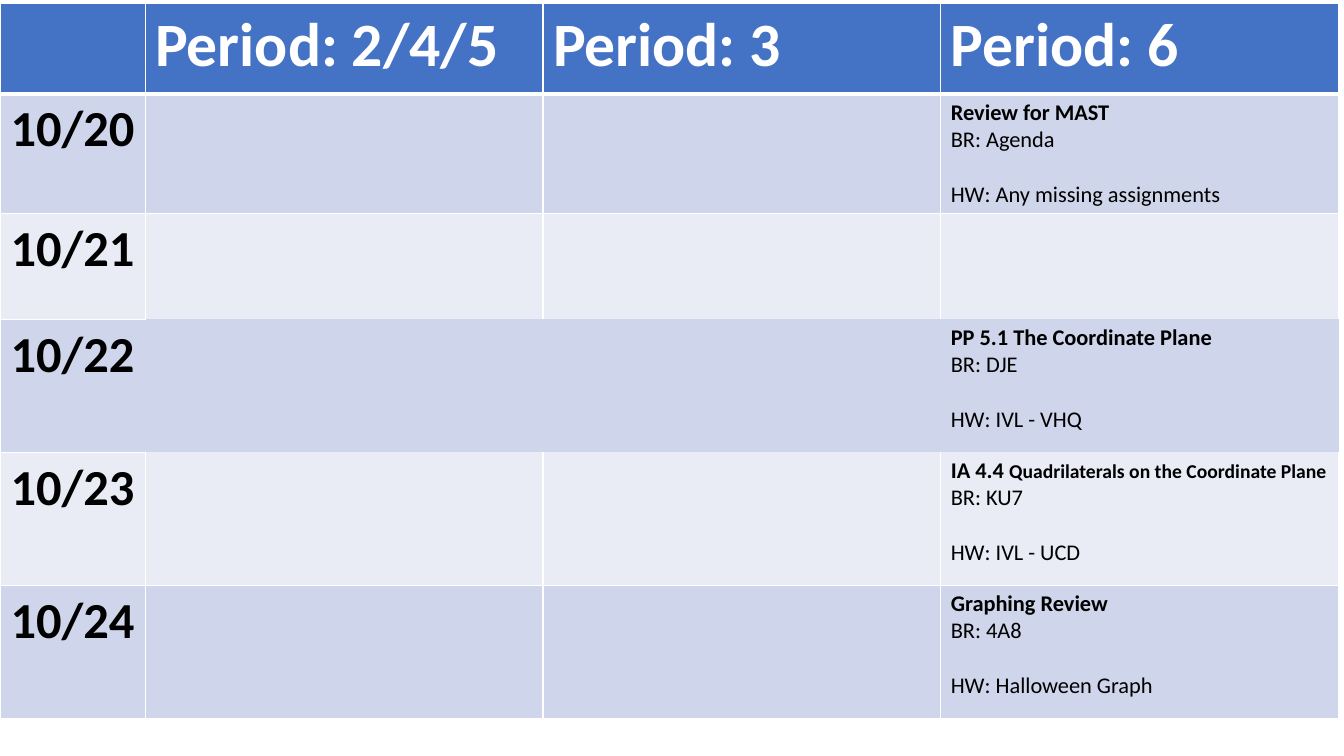
from dataclasses import dataclass

import pptx
import pptx.dml.color
import pptx.enum.text
import pptx.oxml
import pptx.oxml.ns
import pptx.util


@dataclass(frozen=True)
class Theme:
    font: str = "Calibri"
    header_fill: str = "4472C4"
    bands: tuple[str, str] = ("CFD5EA", "E9EBF5")
    white: str = "FFFFFF"
    ink: str = "000000"
    header_size: float = 44
    date_size: float = 36
    lesson_size: float = 16
    topic_size: float = 14
    homework_gap: float = 19.5
    thin: float = 1
    thick: float = 3


@dataclass(frozen=True)
class Span:
    text: str
    size: float
    bold: bool = True
    color: str = Theme.ink


@dataclass(frozen=True)
class Lesson:
    title: str
    opener: str
    homework: str
    topic: str = ""


@dataclass(frozen=True)
class Day:
    date: str
    height: float
    lesson: Lesson | None = None


THEME = Theme()
SLIDE_WIDTH = pptx.util.Inches(13.33)
SLIDE_HEIGHT = pptx.util.Inches(7.5)
TABLE_TOP = 0.004
COLUMN_SHARES = (0.108, 0.296, 0.296, 0.296)
HEADER_SHARE = 0.12
HEADINGS = ("", "Period: 2/4/5", "Period: 3", "Period: 6")
DAYS = (
    Day("10/20", 0.155, Lesson("Review for MAST", "BR: Agenda", "HW: Any missing assignments")),
    Day("10/21", 0.14),
    Day("10/22", 0.176, Lesson("PP 5.1 The Coordinate Plane", "BR: DJE", "HW: IVL - VHQ")),
    Day("10/23", 0.176, Lesson("IA 4.4 ", "BR: KU7", "HW: IVL - UCD",
                               "Quadrilaterals on the Coordinate Plane")),
    Day("10/24", 0.176, Lesson("Graphing Review", "BR: 4A8", "HW: Halloween Graph")),
)
OPEN_ROW = 1 + [day.date for day in DAYS].index("10/22")


def write_paragraph(box, index: int, spans: list[Span], **layout) -> None:
    para = box.paragraphs[0] if index == 0 else box.add_paragraph()
    for name, value in layout.items():
        setattr(para, name, value)
    for span in spans:
        run = para.add_run()
        run.text = span.text
        formats = {"name": THEME.font, "size": pptx.util.Pt(span.size), "bold": span.bold}
        for name, value in formats.items():
            setattr(run.font, name, value)
        run.font.color.rgb = pptx.dml.color.RGBColor.from_string(span.color)


def write_lesson(box, lesson: Lesson) -> None:
    size = THEME.lesson_size
    title = [Span(lesson.title, size)]
    if lesson.topic:
        title.append(Span(lesson.topic, THEME.topic_size))
    write_paragraph(box, 0, title)
    write_paragraph(box, 1, [Span(lesson.opener, size, False)])
    write_paragraph(box, 2, [Span(lesson.homework, size, False)],
                    space_before=pptx.util.Pt(THEME.homework_gap))


def edge_widths(row: int, column: int) -> dict[str, float]:
    """Return border widths; the lesson cells around the open row share no lines with it."""
    edges = dict.fromkeys("LRTB", THEME.thin)
    if row == 0:
        edges["B"] = THEME.thick
    if row == 1:
        edges["T"] = THEME.thick
    if row == OPEN_ROW:
        edges.update(dict.fromkeys("LRTB" if column else "R", 0))
    elif column and row == OPEN_ROW - 1:
        edges["B"] = 0
    elif column and row == OPEN_ROW + 1:
        edges["T"] = 0
    return edges


def style_cell(cell, fill: str, edges: dict[str, float]) -> None:
    cell.fill.solid()
    cell.fill.fore_color.rgb = pptx.dml.color.RGBColor.from_string(fill)
    properties = cell._tc.get_or_add_tcPr()
    namespace = pptx.oxml.ns.nsdecls("a")
    for position, (side, width) in enumerate(edges.items()):
        paint = (f'<a:solidFill><a:srgbClr val="{THEME.white}"/></a:solidFill>'
                 if width else "<a:noFill/>")
        line = f'<a:ln{side} {namespace} w="{pptx.util.Pt(width)}">{paint}</a:ln{side}>'
        properties.insert(position, pptx.oxml.parse_xml(line))


def add_planner(page) -> None:
    row_shares = (HEADER_SHARE, *(day.height for day in DAYS))
    table = page.shapes.add_table(
        len(row_shares), len(COLUMN_SHARES), 0, int(SLIDE_HEIGHT * TABLE_TOP),
        int(SLIDE_WIDTH * sum(COLUMN_SHARES)), int(SLIDE_HEIGHT * sum(row_shares))).table
    for column, share in zip(table.columns, COLUMN_SHARES):
        column.width = int(SLIDE_WIDTH * share)
    for row, share in enumerate(row_shares):
        table.rows[row].height = int(SLIDE_HEIGHT * share)
        fill = THEME.bands[(row - 1) % 2] if row else THEME.header_fill
        for column in range(len(COLUMN_SHARES)):
            style_cell(table.cell(row, column), fill, edge_widths(row, column))

    for column, heading in enumerate(HEADINGS):
        if heading:
            write_paragraph(table.cell(0, column).text_frame, 0,
                            [Span(heading, THEME.header_size, color=THEME.white)])
    for row, day in enumerate(DAYS, start=1):
        write_paragraph(table.cell(row, 0).text_frame, 0, [Span(day.date, THEME.date_size)],
                        alignment=pptx.enum.text.PP_ALIGN.CENTER)
        if day.lesson:
            write_lesson(table.cell(row, len(HEADINGS) - 1).text_frame, day.lesson)


def main() -> None:
    deck = pptx.Presentation()
    deck.slide_width, deck.slide_height = SLIDE_WIDTH, SLIDE_HEIGHT
    page = deck.slides.add_slide(deck.slide_layouts[6])
    add_planner(page)
    deck.save("out.pptx")


if __name__ == "__main__":
    main()
